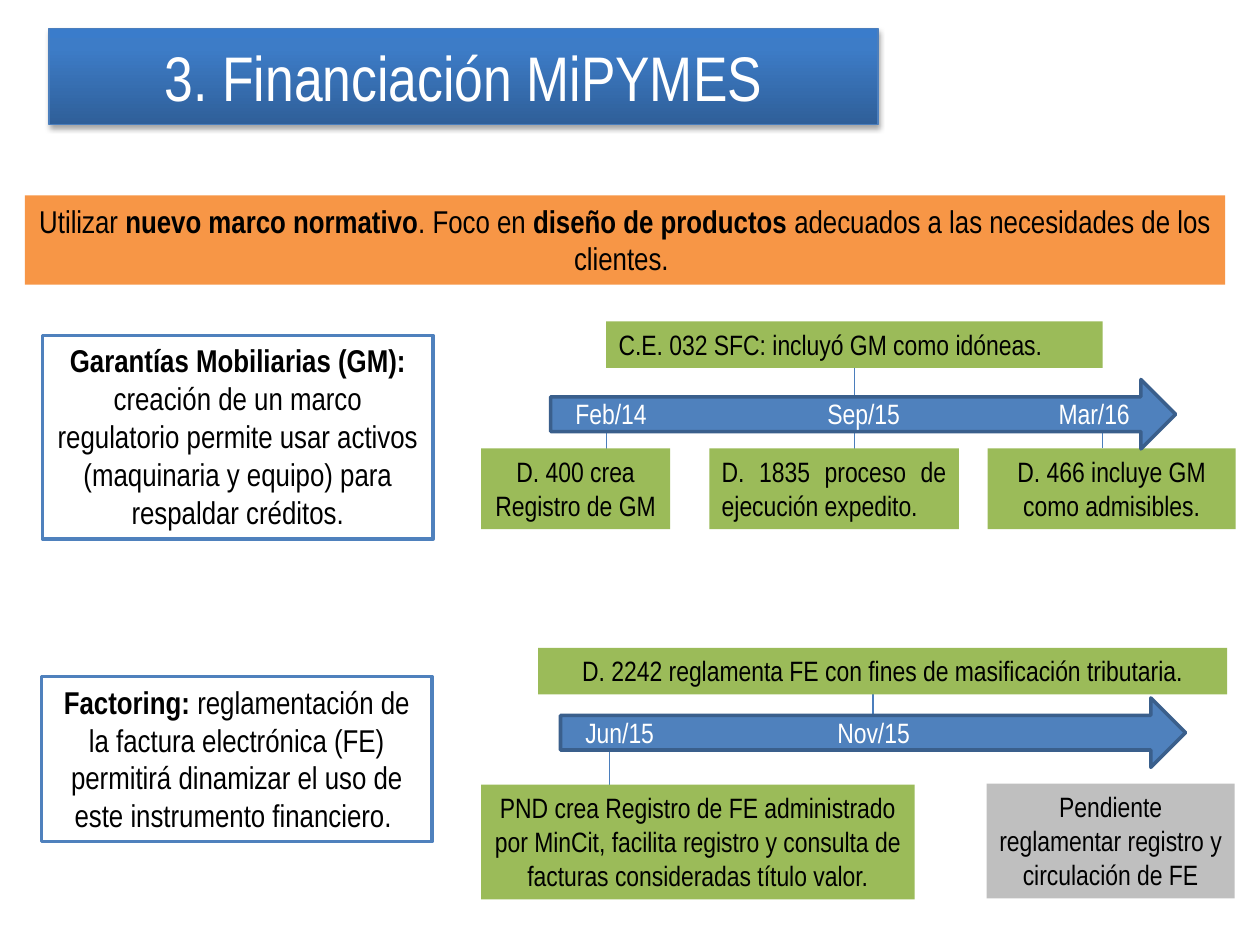
from dataclasses import dataclass
from typing import Optional

from lxml.etree import SubElement
from pptx import Presentation
from pptx.dml.color import RGBColor as Rgb
from pptx.enum.shapes import MSO_CONNECTOR as Connector, MSO_SHAPE as Preset
from pptx.enum.text import MSO_ANCHOR as Anchor, MSO_AUTO_SIZE as AutoSize, PP_ALIGN as Align
from pptx.oxml.ns import qn
from pptx.util import Cm, Pt


@dataclass(frozen=True)
class Theme:
    font: str = "Arial Narrow"
    title_size: int = 36
    lead_size: int = 18
    note_size: int = 16
    black: str = "000000"
    white: str = "FFFFFF"
    orange: str = "F79646"
    green: str = "9BBB59"
    gray: str = "BFBFBF"
    blue: str = "4F81BD"
    dark_blue: str = "3A5F8C"
    thin_blue: str = "4B7EBC"
    gradient: tuple = ((0, "2F5F99"), (0.8, "3D7CC7"), (1, "3A7CCB"))


THEME = Theme()


@dataclass(frozen=True)
class Box:
    left: float
    top: float
    width: float
    height: float
    spans: tuple
    fill: str = THEME.green
    size: int = THEME.note_size
    align: Align = Align.CENTER
    border: Optional[str] = None


@dataclass(frozen=True)
class Link:
    x: float
    start: float
    end: float


@dataclass(frozen=True)
class Timeline:
    left: float
    top: float
    dates: tuple


BANNER = Box(0.5, 3.94, 24.2, 1.8, (
    ("Utilizar ", False), ("nuevo marco normativo", True), (". Foco en ", False),
    ("diseño de productos ", True), ("adecuados a las necesidades de los clientes. ", False),
), THEME.orange, THEME.lead_size)

LINKS = (
    Link(12.29, 16, 14.71),
    Link(17.6, 14.76, 13.49),
    Link(22.22, 9.04, 8.18),
    Link(12.22, 9.19, 8.33),
    Link(17.22, 9.65, 7.06),
)

TOPICS = (
    Box(0.86, 6.76, 7.87, 4.11, (
        ("Garantías Mobiliarias (GM): ", True),
        ("creación de un marco regulatorio permite usar activos "
         "(maquinaria y equipo) para respaldar créditos.", False),
    ), THEME.white, THEME.lead_size, border=THEME.blue),
    Box(0.84, 13.64, 7.87, 3.33, (
        ("Factoring: ", True),
        ("reglamentación de la factura electrónica (FE) permitirá dinamizar "
         "el uso de este instrumento financiero. ", False),
    ), THEME.white, THEME.lead_size, border=THEME.blue),
)

MILESTONES = (
    Box(9.7, 9.04, 3.81, 1.63, (("D. 400 crea Registro de GM", False),)),
    Box(14.3, 9.04, 5.03, 1.63, (("D. 1835 proceso de ejecución expedito.", False),),
        align=Align.JUSTIFY),
    Box(19.91, 9.04, 5, 1.63, (("D. 466 incluye GM como admisibles.", False),)),
    Box(12.22, 6.48, 10.01, 0.94, (("C.E. 032 SFC: incluyó GM como idóneas.", False),),
        align=Align.JUSTIFY),
    Box(10.85, 13.06, 13.89, 0.94,
        (("D. 2242 reglamenta FE con fines de masificación tributaria.", False),)),
    Box(9.7, 15.82, 8.74, 2.31, ((
        "PND crea Registro de FE administrado por MinCit, facilita registro "
        "y consulta de facturas consideradas título valor.", False),)),
    Box(19.89, 15.8, 5, 2.31,
        (("Pendiente reglamentar registro y circulación de FE", False),), THEME.gray),
)

TIMELINES = (
    Timeline(11.1, 7.65, ("Feb/14", "Sep/15", "Mar/16")),
    Timeline(11.3, 14.07, ("Jun/15", "Nov/15")),
)
DATE_STOPS = (5.08, 9.74)


def set_all(target, values: dict) -> None:
    for name, value in values.items():
        setattr(target, name, value)


def place(shape, left: float, top: float, width: float, height: float) -> None:
    set_all(shape, {"left": Cm(left), "top": Cm(top),
                    "width": Cm(width), "height": Cm(height)})


def add_span(para, text: str, size: int, color: str, bold: bool = False) -> None:
    span = para.add_run()
    span.text = text
    set_all(span.font, {"name": THEME.font, "size": Pt(size), "bold": bold})
    span.font.color.rgb = Rgb.from_string(color)


def paint_line(line, color: str, width: float) -> None:
    line.color.rgb = Rgb.from_string(color)
    line.width = Pt(width)


def paint_fill(shape, color: str) -> None:
    shape.fill.solid()
    shape.fill.fore_color.rgb = Rgb.from_string(color)


def draw_title(page, text: str) -> None:
    title = page.shapes.title
    place(title, 0.99, 0.58, 16.71, 1.93)
    title.fill.gradient()
    title.fill.gradient_angle = 90
    stop_list = title.element.spPr.find(qn("a:gradFill")).find(qn("a:gsLst"))
    for stop in list(stop_list):
        stop_list.remove(stop)
    for position, color in THEME.gradient:
        stop = SubElement(stop_list, qn("a:gs"), pos=str(round(position * 100000)))
        SubElement(stop, qn("a:srgbClr"), val=color)
    paint_line(title.line, THEME.thin_blue, 0.75)
    effects = SubElement(title.element.spPr, qn("a:effectLst"))
    shadow = SubElement(effects, qn("a:outerShdw"), blurRad=str(Pt(3.1)),
                        dist=str(Pt(1.8)), dir="5400000", rotWithShape="0")
    tint = SubElement(shadow, qn("a:srgbClr"), val=THEME.black)
    SubElement(tint, qn("a:alpha"), val="35000")
    frame = title.text_frame
    set_all(frame, {"word_wrap": True, "auto_size": AutoSize.NONE,
                    "vertical_anchor": Anchor.MIDDLE})
    para = frame.paragraphs[0]
    para.alignment = Align.CENTER
    add_span(para, text, THEME.title_size, THEME.white)


def draw_box(page, box: Box) -> None:
    shape = page.shapes.add_textbox(Cm(box.left), Cm(box.top), Cm(box.width), Cm(box.height))
    paint_fill(shape, box.fill)
    if box.border:
        paint_line(shape.line, box.border, 2)
    frame = shape.text_frame
    set_all(frame, {"word_wrap": True, "auto_size": AutoSize.SHAPE_TO_FIT_TEXT})
    para = frame.paragraphs[0]
    para.alignment = box.align
    for text, bold in box.spans:
        add_span(para, text, box.size, THEME.black, bold)


def draw_link(page, link: Link) -> None:
    line = page.shapes.add_connector(Connector.STRAIGHT, Cm(link.x), Cm(link.start),
                                     Cm(link.x), Cm(link.end))
    paint_line(line.line, THEME.thin_blue, 0.75)
    SubElement(line.line._get_or_add_ln(), qn("a:tailEnd"), type="arrow")
    SubElement(line.element.spPr, qn("a:effectLst"))


def draw_timeline(page, timeline: Timeline) -> None:
    group = page.shapes.add_group_shape()
    arrow = group.shapes.add_shape(Preset.RIGHT_ARROW, Cm(timeline.left), Cm(timeline.top),
                                   Cm(12.6), Cm(1.4))
    arrow.shadow.inherit = False
    paint_fill(arrow, THEME.blue)
    paint_line(arrow.line, THEME.dark_blue, 2)
    label = group.shapes.add_textbox(Cm(timeline.left + 0.25), Cm(timeline.top + 0.22),
                                     Cm(11.76), Cm(0.94))
    frame = label.text_frame
    set_all(frame, {"word_wrap": True, "auto_size": AutoSize.SHAPE_TO_FIT_TEXT})
    para = frame.paragraphs[0]
    tabs = SubElement(para._p.get_or_add_pPr(), qn("a:tabLst"))
    for stop in DATE_STOPS[:len(timeline.dates) - 1]:
        SubElement(tabs, qn("a:tab"), pos=str(Cm(stop)), algn="l")
    add_span(para, "\t".join(timeline.dates), THEME.note_size, THEME.white)


def main() -> None:
    deck = Presentation()
    set_all(deck, {"slide_width": Cm(25.4), "slide_height": Cm(19.05)})
    page = deck.slides.add_slide(deck.slide_layouts[5])
    draw_title(page, "3. Financiación MiPYMES")
    draw_box(page, BANNER)
    for link in LINKS:
        draw_link(page, link)
    for box in TOPICS + MILESTONES:
        draw_box(page, box)
    for timeline in TIMELINES:
        draw_timeline(page, timeline)
    deck.save("out.pptx")


if __name__ == "__main__":
    main()
